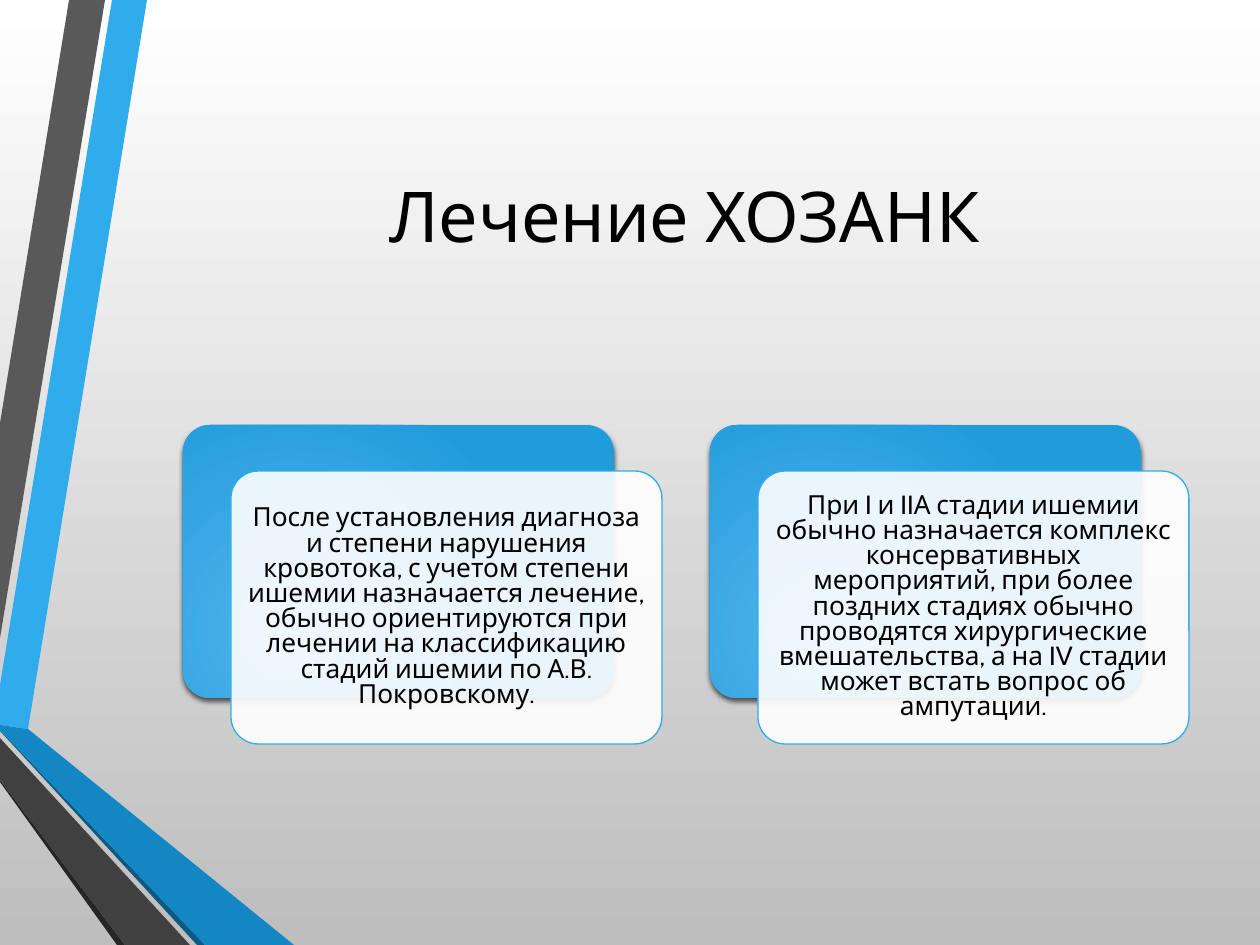
import pptx
import pptx.dml.color
import pptx.enum.shapes
import pptx.enum.text
import pptx.oxml
import pptx.oxml.ns
import pptx.util
from dataclasses import dataclass


@dataclass(frozen=True)
class Theme:
    """Colours, font and type sizes of the slide."""
    font: str = "Cabin"
    title_pt: int = 40
    body_pt: int = 15
    text: str = "000000"
    back_top: str = "FFFFFF"
    back_bottom: str = "BEBEBE"
    accent: str = "30ACEC"
    accent_glow: str = "51B3ED"
    accent_edge: str = "219CDB"
    accent_fold: str = "1287C3"
    accent_shade: str = "0C5A82"
    grey: str = "595959"
    grey_fold: str = "404040"
    grey_shade: str = "262626"
    card: str = "FFFFFF"


THEME = Theme()
EMU_PER_PX = 914400 / 126
SLIDE_W, SLIDE_H = 1260, 945
CARD_W, CARD_H = 431, 273
CARD_X, CARD_Y, CARD_STEP = 183, 425, 527
FRONT_DX, FRONT_DY, CARD_INSET = 48, 46, 8

RIBBONS = [
    (THEME.accent, [(0, 685), (0, 725), (28, 729), (147, 0), (112, 0)]),
    (THEME.grey, [(105, 0), (69, 0), (0, 423), (0, 638)]),
    (THEME.grey_shade, [(0, 780), (0, 782), (117, 945), (125, 945)]),
    (THEME.accent_shade, [(0, 730), (0, 731), (197, 945), (205, 945)]),
    (THEME.accent_fold, [(0, 730), (205, 945), (294, 945), (28, 729), (0, 725)]),
    (THEME.grey_fold, [(0, 780), (125, 945), (190, 945), (0, 738)]),
]
TITLE = "Лечение ХОЗАНК"
CARDS = [
    "После установления диагноза и степени нарушения кровотока, с учетом "
    "степени ишемии назначается лечение, обычно ориентируются при лечении "
    "на классификацию стадий ишемии по А.В. Покровскому.",
    "При I и IIА стадии ишемии обычно назначается комплекс консервативных "
    "мероприятий, при более поздних стадиях обычно проводятся хирургические "
    "вмешательства, а на IV стадии может встать вопрос об ампутации.",
]


def px(n):
    """Turn pixels into EMU."""
    return pptx.util.Emu(round(n * EMU_PER_PX))


def rgb(code):
    """Turn a hex code into a colour."""
    return pptx.dml.color.RGBColor.from_string(code)


def xml(body):
    """Parse a DrawingML fragment that may use the a: prefix."""
    head, tail = body.split(" ", 1)
    return pptx.oxml.parse_xml(f"{head} {pptx.oxml.ns.nsdecls('a')} {tail}")


def set_gradient(fill, first, last):
    """Give a fill a two-stop gradient."""
    fill.gradient()
    for stop, code in zip(fill.gradient_stops, (first, last)):
        stop.color.rgb = rgb(code)


def set_text(sp, text, size):
    """Write one centred paragraph in the middle of a shape."""
    tf = sp.text_frame
    tf.word_wrap = True
    tf.vertical_anchor = pptx.enum.text.MSO_ANCHOR.MIDDLE
    tf.text = text
    p = tf.paragraphs[0]
    p.alignment = pptx.enum.text.PP_ALIGN.CENTER
    font = p.runs[0].font
    font.name, font.size = THEME.font, pptx.util.Pt(size)
    font.color.rgb = rgb(THEME.text)
    return tf


def add_ribbon(s, color, points):
    """Draw one flat polygon of the side decoration."""
    builder = s.shapes.build_freeform(*points[0], scale=EMU_PER_PX)
    builder.add_line_segments(points[1:], close=True)
    sp = builder.convert_to_shape()
    sp.fill.solid()
    sp.fill.fore_color.rgb = rgb(color)
    sp.line.fill.background()
    sp.shadow.inherit = False


def add_panel(s, x, y):
    """Add a rounded card-sized rectangle without shadow."""
    kind = pptx.enum.shapes.MSO_SHAPE.ROUNDED_RECTANGLE
    sp = s.shapes.add_shape(kind, px(x), px(y), px(CARD_W), px(CARD_H))
    sp.adjustments[0] = 0.1
    sp.shadow.inherit = False
    return sp


def add_back_panel(s, x, y):
    """Add the blue panel with a radial gradient and a soft shadow."""
    sp = add_panel(s, x, y)
    set_gradient(sp.fill, THEME.accent_glow, THEME.accent_edge)
    sp.line.fill.background()
    props = sp._element.spPr
    lin = props.find(".//" + pptx.oxml.ns.qn("a:lin"))
    lin.getparent().replace(lin, xml(
        '<a:path path="circle">'
        '<a:fillToRect l="50000" t="100000" r="100000" b="50000"/></a:path>'))
    props.find(pptx.oxml.ns.qn("a:effectLst")).append(xml(
        '<a:outerShdw blurRad="38100" dist="25400" dir="5400000" rotWithShape="0">'
        '<a:srgbClr val="000000"><a:alpha val="64000"/></a:srgbClr></a:outerShdw>'))


def add_front_panel(s, x, y, text):
    """Add the translucent white panel that carries the text."""
    sp = add_panel(s, x, y)
    sp.fill.solid()
    sp.fill.fore_color.rgb = rgb(THEME.card)
    color = sp._element.spPr.find(".//" + pptx.oxml.ns.qn("a:srgbClr"))
    color.append(xml('<a:alpha val="90000"/>'))
    sp.line.color.rgb = rgb(THEME.accent)
    sp.line.width = pptx.util.Pt(0.75)
    tf = set_text(sp, text, THEME.body_pt)
    tf.margin_left = tf.margin_right = px(CARD_INSET)
    tf.margin_top = tf.margin_bottom = px(CARD_INSET)
    tf.paragraphs[0].line_spacing = 0.8


def main():
    """Build and save the slide."""
    prs = pptx.Presentation()
    prs.slide_width, prs.slide_height = px(SLIDE_W), px(SLIDE_H)
    s = prs.slides.add_slide(prs.slide_layouts[6])
    back = s.background.fill
    set_gradient(back, THEME.back_top, THEME.back_bottom)
    back.gradient_angle = 270
    for color, points in RIBBONS:
        add_ribbon(s, color, points)
    title = s.shapes.add_textbox(px(181), px(94), px(1007), px(242))
    set_text(title, TITLE, THEME.title_pt)
    for i, text in enumerate(CARDS):
        x = CARD_X + i * CARD_STEP
        add_back_panel(s, x, CARD_Y)
        add_front_panel(s, x + FRONT_DX, CARD_Y + FRONT_DY, text)
    prs.save("out.pptx")


if __name__ == "__main__":
    main()
